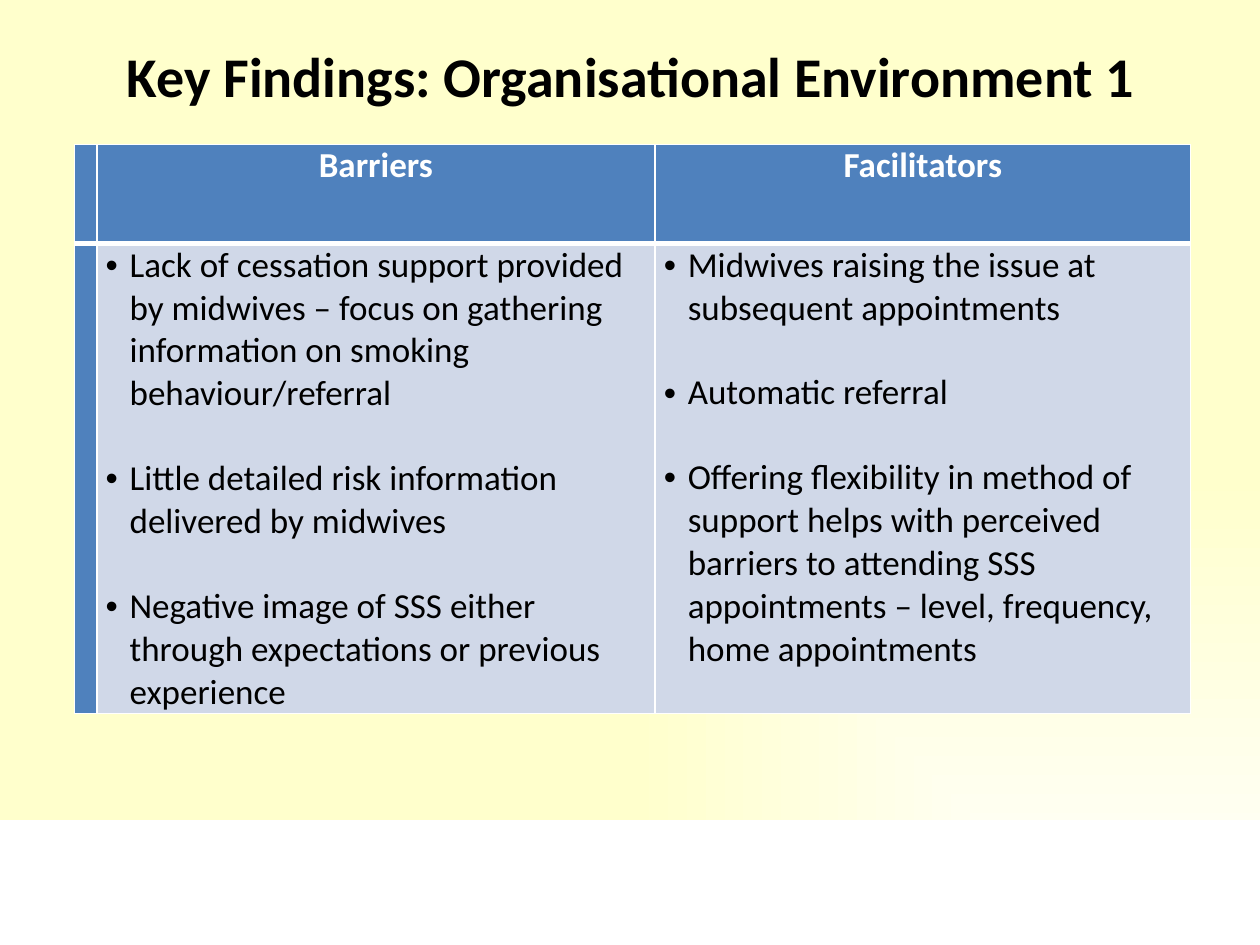
from dataclasses import dataclass

from lxml.etree import SubElement
from pptx import Presentation
from pptx.dml.color import RGBColor as Rgb
from pptx.enum.shapes import MSO_SHAPE as Shape
from pptx.enum.text import MSO_ANCHOR as Anchor, PP_ALIGN as Align
from pptx.oxml.ns import qn
from pptx.util import Inches, Pt


@dataclass(frozen=True)
class Theme:
    font: str = "Calibri"
    title_size: int = 32
    table_size: int = 20
    item_gap: int = 24
    thin_line: int = 1
    thick_line: int = 3
    text: str = "000000"
    white: str = "FFFFFF"
    cream: str = "FFFFCC"
    header: str = "4F81BD"
    body: str = "D0D8E8"


TITLE = "Key Findings: Organisational Environment 1"
FINDINGS = {
    "Barriers": [
        "Lack of cessation support provided by midwives – focus on gathering "
        "information on smoking behaviour/referral",
        "Little detailed risk information delivered by midwives",
        "Negative image of SSS either through expectations or previous experience",
    ],
    "Facilitators": [
        "Midwives raising the issue at subsequent appointments",
        "Automatic referral",
        "Offering flexibility in method of support helps with perceived barriers "
        "to attending SSS appointments – level, frequency, home appointments",
    ],
}


class SlideBuilder:
    """Holds the theme and the slide; boxes are shares of the slide's size."""

    def __init__(self, deck, theme):
        self.theme = theme
        self.width, self.height = deck.slide_width, deck.slide_height
        self.slide = deck.slides.add_slide(deck.slide_layouts[5])

    def box(self, left, top, width, height):
        return (int(left * self.width), int(top * self.height),
                int(width * self.width), int(height * self.height))

    def background(self, focus_color, edge_color):
        """Rectangular gradient that spreads from the bottom right corner."""
        fill = self.slide.background.fill
        fill.gradient()
        for stop, color in zip(fill.gradient_stops, (focus_color, edge_color)):
            stop.color.rgb = Rgb.from_string(color)
        gradient = next(self.slide.element.iter(qn("a:gradFill")))
        gradient.remove(gradient.find(qn("a:lin")))
        path = SubElement(gradient, qn("a:path"), {"path": "rect"})
        SubElement(path, qn("a:fillToRect"), {"l": "100000", "t": "100000"})

    def band(self, color, *shares):
        band = self.slide.shapes.add_shape(Shape.RECTANGLE, *self.box(*shares))
        band.shadow.inherit = False
        band.fill.solid()
        band.fill.fore_color.rgb = Rgb.from_string(color)
        band.line.fill.background()

    def style(self, paragraph, size, color, bold=False):
        for run in paragraph.runs:
            run.font.name = self.theme.font
            run.font.size = Pt(size)
            run.font.bold = bold
            run.font.color.rgb = Rgb.from_string(color)

    def title(self, text, *shares):
        title = self.slide.shapes.title
        title.left, title.top, title.width, title.height = self.box(*shares)
        frame = title.text_frame
        frame.text = text
        frame.word_wrap = True
        frame.vertical_anchor = Anchor.TOP
        heading = frame.paragraphs[0]
        heading.alignment = Align.CENTER
        self.style(heading, self.theme.title_size, self.theme.text, bold=True)

    def borders(self, cell, **widths):
        properties = cell._tc.get_or_add_tcPr()
        for position, side in enumerate("LRTB"):
            line = properties.makeelement(
                qn(f"a:ln{side}"), {"w": str(Pt(widths.get(side, self.theme.thin_line)))})
            fill = SubElement(line, qn("a:solidFill"))
            SubElement(fill, qn("a:srgbClr"), {"val": self.theme.white})
            properties.insert(position, line)

    def cell(self, cell, color, **border_widths):
        cell.fill.solid()
        cell.fill.fore_color.rgb = Rgb.from_string(color)
        cell.margin_left = cell.margin_right = Inches(0.07)
        cell.margin_top = cell.margin_bottom = 0
        self.borders(cell, **border_widths)

    def heading(self, cell, text):
        cell.text_frame.text = text
        paragraph = cell.text_frame.paragraphs[0]
        paragraph.alignment = Align.CENTER
        self.style(paragraph, self.theme.table_size, self.theme.white, bold=True)

    def bullets(self, cell, items):
        cell.text_frame.text = "\n".join(items)
        for number, paragraph in enumerate(cell.text_frame.paragraphs):
            properties = paragraph._p.get_or_add_pPr()
            properties.set("marL", str(Inches(0.19)))
            properties.set("indent", str(Inches(-0.19)))
            SubElement(properties, qn("a:buFont"), {"typeface": "Arial"})
            SubElement(properties, qn("a:buChar"), {"char": "•"})
            if number:
                paragraph.space_before = Pt(self.theme.item_gap)
            self.style(paragraph, self.theme.table_size, self.theme.text)

    def findings_table(self, findings, left, top, columns, rows):
        """Adds one column per group after a narrow stub column."""
        table = self.slide.shapes.add_table(
            len(rows), len(columns), *self.box(left, top, sum(columns), sum(rows))).table
        for column, share in zip(table.columns, columns):
            column.width = int(share * self.width)
        for row, share in zip(table.rows, rows):
            row.height = int(share * self.height)

        theme = self.theme
        for index in range(len(columns)):
            self.cell(table.cell(0, index), theme.header, B=theme.thick_line)
            self.cell(table.cell(1, index), theme.body if index else theme.header,
                      T=theme.thick_line)
        for index, (group, items) in enumerate(findings.items(), start=1):
            self.heading(table.cell(0, index), group)
            self.bullets(table.cell(1, index), items)


def main():
    deck = Presentation()
    deck.slide_width, deck.slide_height = Inches(10), Inches(7.5)
    theme = Theme()
    builder = SlideBuilder(deck, theme)
    builder.background(theme.white, theme.cream)
    builder.band(theme.white, 0, 0.868, 1, 0.132)
    builder.title(TITLE, 0.051, 0.037, 0.9, 0.755)
    builder.findings_table(FINDINGS, 0.059, 0.153,
                           columns=(0.017, 0.443, 0.425), rows=(0.105, 0.497))
    deck.save("out.pptx")


if __name__ == "__main__":
    main()
